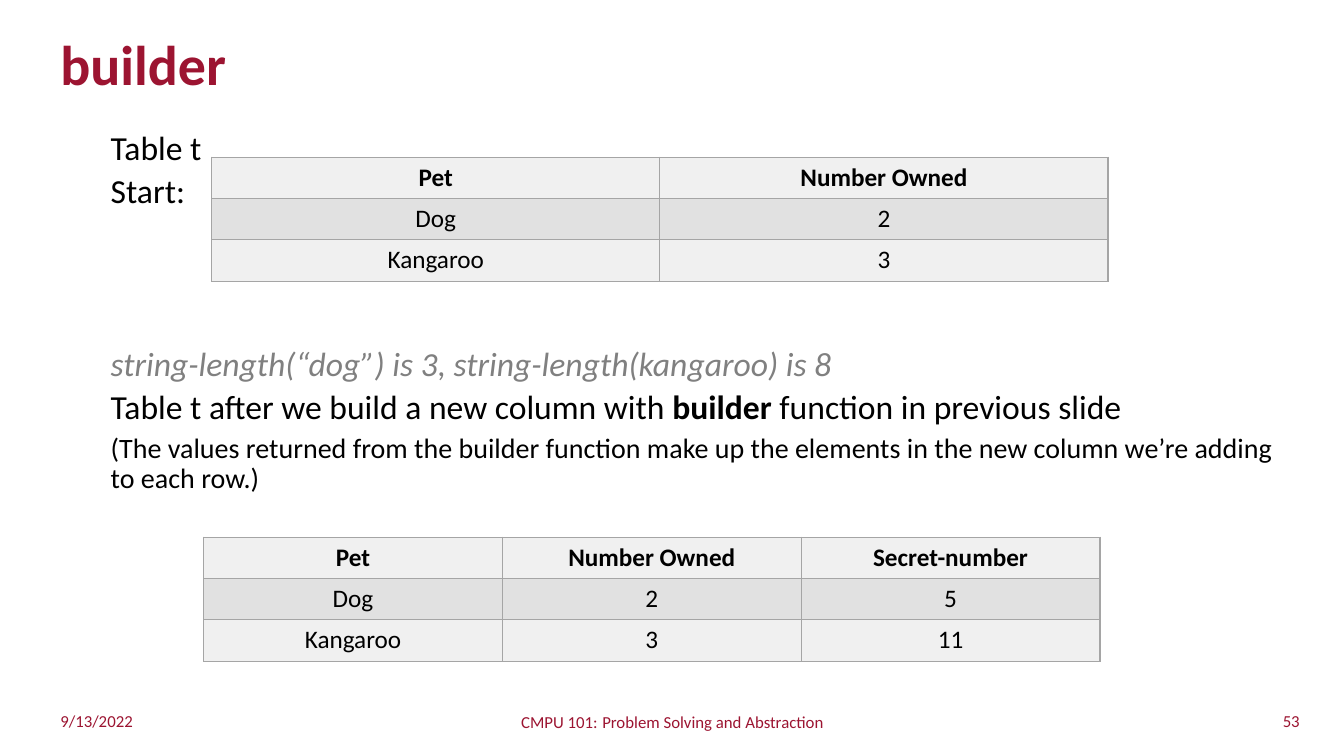
import pptx
import pptx.dml.color
import pptx.enum.text
import pptx.oxml
import pptx.oxml.ns
import pptx.util

PX = 9144  # 100 px to the inch
FONT = "Calibri"
CRIMSON, BLACK, GREY = "9C1431", "000000", "808080"
BORDER, LIGHT, DARK = "A5A5A5", "F0F0F0", "E1E1E1"
ALIGN = pptx.enum.text.PP_ALIGN
ANCHOR = pptx.enum.text.MSO_ANCHOR


def px(n):
    return pptx.util.Emu(n * PX)


def rgb(hex_color):
    return pptx.dml.color.RGBColor.from_string(hex_color)


def add_run(p, text, size=12, color=BLACK, bold=False, italic=False):
    r = p.add_run()
    r.text = text
    r.font.name = FONT
    r.font.size = pptx.util.Pt(size)
    r.font.color.rgb = rgb(color)
    r.font.bold = bold
    r.font.italic = italic


def add_box(s, left, top, width, height, anchor=ANCHOR.MIDDLE):
    """Add a wrapping text box and return its text frame."""
    tf = s.shapes.add_textbox(px(left), px(top), px(width), px(height)).text_frame
    tf.word_wrap = True
    tf.vertical_anchor = anchor
    return tf


def add_line(s, at, runs, align=ALIGN.LEFT):
    """Add a one-paragraph box from (text, format) runs."""
    p = add_box(s, *at).paragraphs[0]
    p.alignment = align
    for text, fmt in runs:
        add_run(p, text, **fmt)


def add_body(s, at, paragraphs):
    """Add indented paragraphs, each given as (space before, runs)."""
    tf = add_box(s, *at, anchor=ANCHOR.TOP)
    for i, (space, runs) in enumerate(paragraphs):
        p = tf.add_paragraph() if i else tf.paragraphs[0]
        p._p.get_or_add_pPr().set("marL", str(px(50)))
        p.line_spacing = 0.9
        p.space_before = pptx.util.Pt(space)
        for text, fmt in runs:
            add_run(p, text, **fmt)


def add_borders(cell):
    tcPr = cell._tc.get_or_add_tcPr()
    for side in ("lnL", "lnR", "lnT", "lnB"):
        tcPr.append(pptx.oxml.parse_xml(
            f'<a:{side} {pptx.oxml.ns.nsdecls("a")} w="12700"><a:solidFill>'
            f'<a:srgbClr val="{BORDER}"/></a:solidFill></a:{side}>'))


def add_pet_table(s, left, top, rows, width=889, row_height=41):
    table = s.shapes.add_table(len(rows), len(rows[0]), px(left), px(top),
                               px(width), px(row_height * len(rows))).table
    for i, row in enumerate(rows):
        for j, text in enumerate(row):
            cell = table.cell(i, j)
            add_borders(cell)
            cell.fill.solid()
            cell.fill.fore_color.rgb = rgb(DARK if i % 2 else LIGHT)
            p = cell.text_frame.paragraphs[0]
            p.alignment = ALIGN.CENTER
            add_run(p, text, size=18, bold=i == 0)


def main():
    prs = pptx.Presentation()
    prs.slide_width, prs.slide_height = px(1333), px(750)
    s = prs.slides.add_slide(prs.slide_layouts[6])

    add_line(s, (50, 25, 1145, 75),
             [("builder", dict(size=40, color=CRIMSON, bold=True))])

    body = dict(size=24)
    add_body(s, (50, 125, 1233, 545), [
        (0, [("Table t", body)]),
        (5, [("Start:", body)]),
        (98, [("string-length(“dog”) is 3, string-length(kangaroo) is 8",
               dict(size=24, color=GREY, italic=True))]),
        (5, [("Table t after we build a new column with ", body),
             ("builder ", dict(size=24, bold=True)),
             ("function in previous slide", body)]),
        (5, [("(The values returned from the builder function make up the "
              "elements in the new column we’re adding to each row.)",
              dict(size=20))]),
    ])

    pets = [("Pet", "Number Owned"), ("Dog", "2"), ("Kangaroo", "3")]
    secrets = ["Secret-number", "5", "11"]
    add_pet_table(s, 210, 156, pets)
    add_pet_table(s, 202, 533, [(*row, n) for row, n in zip(pets, secrets)])

    footer = dict(size=12, color=CRIMSON)
    add_line(s, (50, 695, 376, 40), [("9/13/2022", footer)])
    add_line(s, (442, 695, 450, 40),
             [("CMPU 101:", footer), (" ", dict(size=14, color=CRIMSON)),
              ("Problem Solving and Abstraction", footer)], ALIGN.CENTER)
    add_line(s, (923, 695, 376, 40), [("53", footer)], ALIGN.RIGHT)

    prs.save("out.pptx")


if __name__ == "__main__":
    main()
